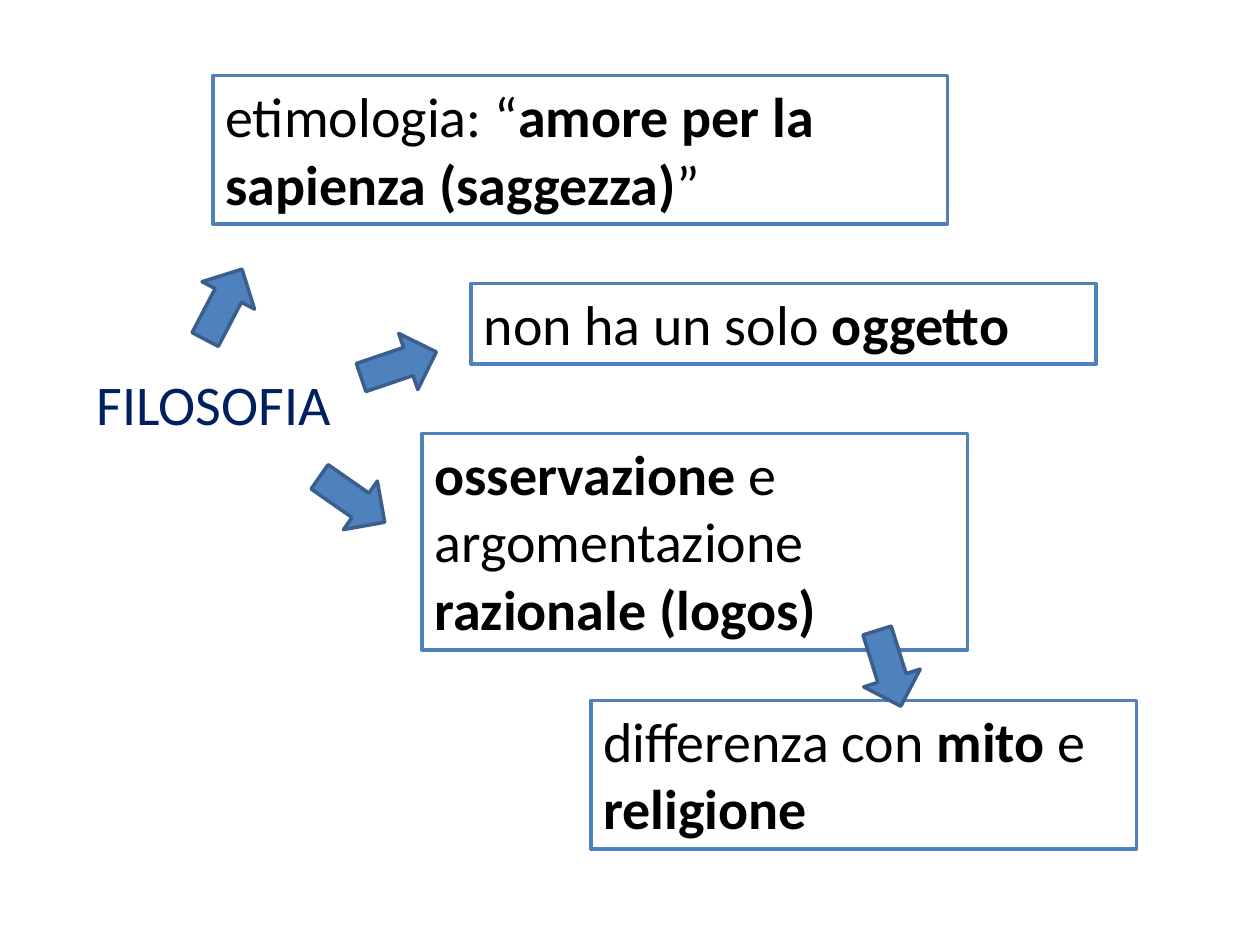
from pptx import Presentation
from pptx.dml.color import RGBColor
from pptx.enum.shapes import MSO_SHAPE as SHAPE
from pptx.enum.text import MSO_ANCHOR as ANCHOR, PP_ALIGN as ALIGN
from pptx.util import Inches, Pt


def rgb(value):
    return RGBColor.from_string(value)


class Diagram:
    """Style and current slide of a concept map on a 100 by 75 grid."""

    FONT, SIZE = "Calibri", 32
    BLUE, EDGE, NAVY = "4F81BD", "3A5F8C", "002060"
    BLACK, WHITE = "000000", "FFFFFF"
    COLS, ROWS = 100, 75

    def __init__(self, prs):
        self.w, self.h = prs.slide_width, prs.slide_height
        self.s = prs.slides.add_slide(prs.slide_layouts[6])

    def place(self, col, row, cols, rows):
        dx, dy = self.w / self.COLS, self.h / self.ROWS
        return [round(v) for v in (col * dx, row * dy, cols * dx, rows * dy)]

    def label(self, sp, text, color):
        tf = sp.text_frame
        tf.word_wrap = True
        tf.vertical_anchor = ANCHOR.TOP
        p = tf.paragraphs[0]
        p.alignment = ALIGN.LEFT
        p.font.name, p.font.size = self.FONT, Pt(self.SIZE)
        p.font.color.rgb = rgb(color)
        for i, part in enumerate(text.split("*")):
            if part:
                r = p.add_run()
                r.text = part
                r.font.bold = i % 2 == 1

    def shape(self, kind, area, fill, line):
        sp = self.s.shapes.add_shape(kind, *self.place(*area))
        sp.shadow.inherit = False
        sp.fill.solid()
        sp.fill.fore_color.rgb = rgb(fill)
        sp.line.color.rgb = rgb(line)
        sp.line.width = Pt(2)
        return sp

    def title(self, text, *area):
        self.label(self.s.shapes.add_textbox(*self.place(*area)), text, self.NAVY)

    def box(self, text, *area):
        sp = self.shape(SHAPE.RECTANGLE, area, self.WHITE, self.BLUE)
        self.label(sp, text, self.BLACK)

    def arrow(self, col, row, angle):
        area = (col, row, 6.3, 4.7)
        self.shape(SHAPE.RIGHT_ARROW, area, self.BLUE, self.EDGE).rotation = angle


def main():
    prs = Presentation()
    prs.slide_width, prs.slide_height = Inches(10), Inches(7.5)
    d = Diagram(prs)
    d.title("FILOSOFIA", 6.7, 28.8, 27.6, 6.4)
    d.box("*osservazione* e argomentazione *razionale (logos)*", 33.5, 34.4, 43.3, 17.2)
    d.box("etimologia: “*amore per la sapienza (saggezza)*”", 16.9, 6, 58.3, 11.8)
    d.box("differenza con *mito* e *religione*", 46.9, 55.6, 43.3, 11.8)
    d.box("non ha un solo *oggetto*", 37.4, 22.5, 49.6, 6.4)
    for col, row, angle in [(14.6, 21.8, 297.6), (24.8, 37.3, 34.9),
                            (67.4, 50.7, 72.6), (28.5, 26.6, 341.2)]:
        d.arrow(col, row, angle)
    prs.save("out.pptx")


if __name__ == "__main__":
    main()
